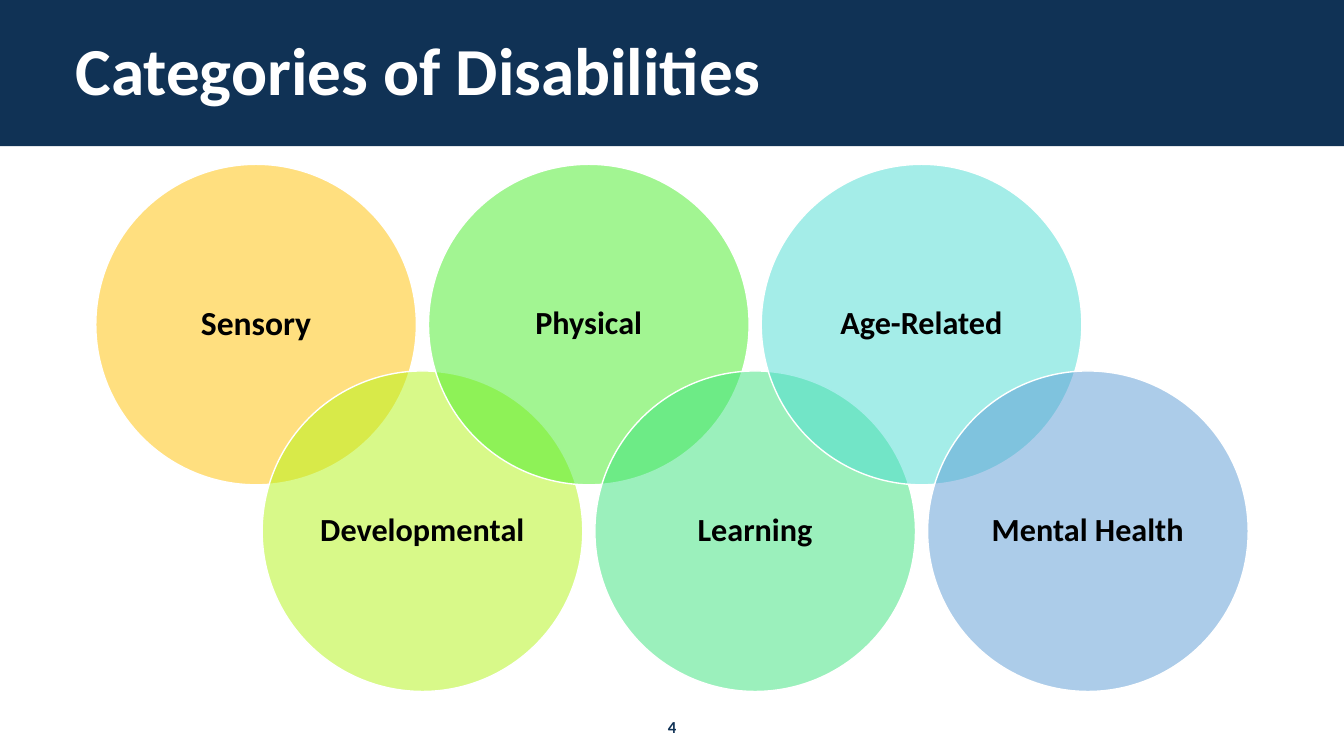
from dataclasses import dataclass

from lxml.etree import SubElement
from pptx import Presentation
from pptx.dml.color import RGBColor
from pptx.enum.shapes import MSO_SHAPE
from pptx.enum.text import MSO_ANCHOR, MSO_AUTO_SIZE, PP_ALIGN
from pptx.oxml.ns import qn
from pptx.slide import Slide
from pptx.text.text import TextFrame
from pptx.util import Emu, Pt

EMU_PER_PX = 9144
NAVY = "103255"
WHITE = "FFFFFF"
BLACK = "000000"
DIAMETER = 318
FIRST_LEFT = 95
STEP = 165
ROW_TOPS = (163, 368)


@dataclass(frozen=True)
class Category:
    label: str
    color: str
    size: int = 23


CATEGORIES = (
    Category("Sensory", "FFC000", 24),
    Category("Developmental", "B2F514"),
    Category("Physical", "46EC27"),
    Category("Learning", "39E37B"),
    Category("Age-Related", "4ADCD2"),
    Category("Mental Health", "5B9BD5"),
)


def px(length: int) -> Emu:
    return Emu(length * EMU_PER_PX)


def rgb(color: str) -> RGBColor:
    return RGBColor.from_string(color)


def write(frame: TextFrame, text: str, size: int, color: str,
          align: PP_ALIGN, line_spacing: float = 1.0) -> None:
    frame.text = text
    frame.word_wrap = True
    frame.auto_size = MSO_AUTO_SIZE.NONE
    frame.vertical_anchor = MSO_ANCHOR.MIDDLE
    paragraph = frame.paragraphs[0]
    paragraph.alignment = align
    paragraph.line_spacing = line_spacing
    font = paragraph.runs[0].font
    font.name = "Calibri"
    font.size = Pt(size)
    font.bold = True
    font.color.rgb = rgb(color)


def add_header(slide: Slide, heading: str) -> None:
    band = slide.shapes.add_shape(MSO_SHAPE.RECTANGLE, 0, 0, px(1333), px(145))
    band.shadow.inherit = False
    band.fill.solid()
    band.fill.fore_color.rgb = rgb(NAVY)
    band.line.fill.background()
    title = slide.shapes.title
    title.left, title.top, title.width, title.height = map(px, (65, 40, 1204, 67))
    write(title.text_frame, heading, 48, WHITE, PP_ALIGN.LEFT, 0.9)
    title._element.addprevious(band._element)


def add_category(slide: Slide, index: int, category: Category) -> None:
    circle = slide.shapes.add_shape(
        MSO_SHAPE.OVAL, px(FIRST_LEFT + index * STEP), px(ROW_TOPS[index % 2]),
        px(DIAMETER), px(DIAMETER))
    circle.shadow.inherit = False
    circle.fill.solid()
    circle.fill.fore_color.rgb = rgb(category.color)
    tint = circle._element.spPr.find(qn("a:solidFill"))[0]
    SubElement(tint, qn("a:alpha")).set("val", "50000")
    circle.line.color.rgb = rgb(WHITE)
    circle.line.width = Pt(1)
    frame = circle.text_frame
    frame.margin_left = frame.margin_right = px(5)
    write(frame, category.label, category.size, BLACK, PP_ALIGN.CENTER, 0.9)


def add_page_number(slide: Slide, number: str) -> None:
    page = slide.shapes.add_textbox(px(609), px(706), px(115), px(30))
    write(page.text_frame, number, 12, NAVY, PP_ALIGN.CENTER)


def main() -> None:
    deck = Presentation()
    deck.slide_width, deck.slide_height = px(1333), px(750)
    slide = deck.slides.add_slide(deck.slide_layouts.get_by_name("Title Only"))
    add_header(slide, "Categories of Disabilities")
    for index, category in enumerate(CATEGORIES):
        add_category(slide, index, category)
    add_page_number(slide, "4")
    deck.save("out.pptx")


if __name__ == "__main__":
    main()
